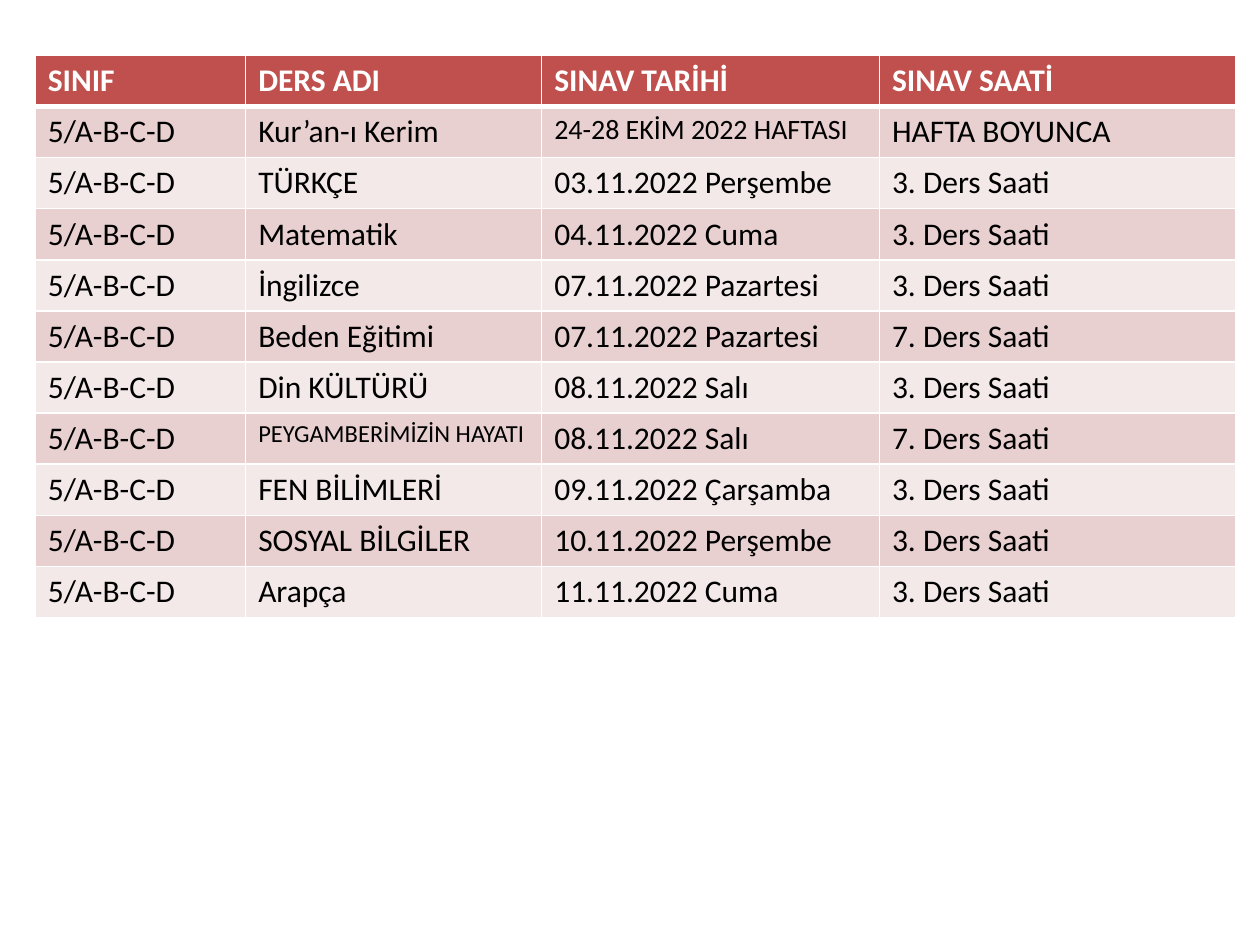
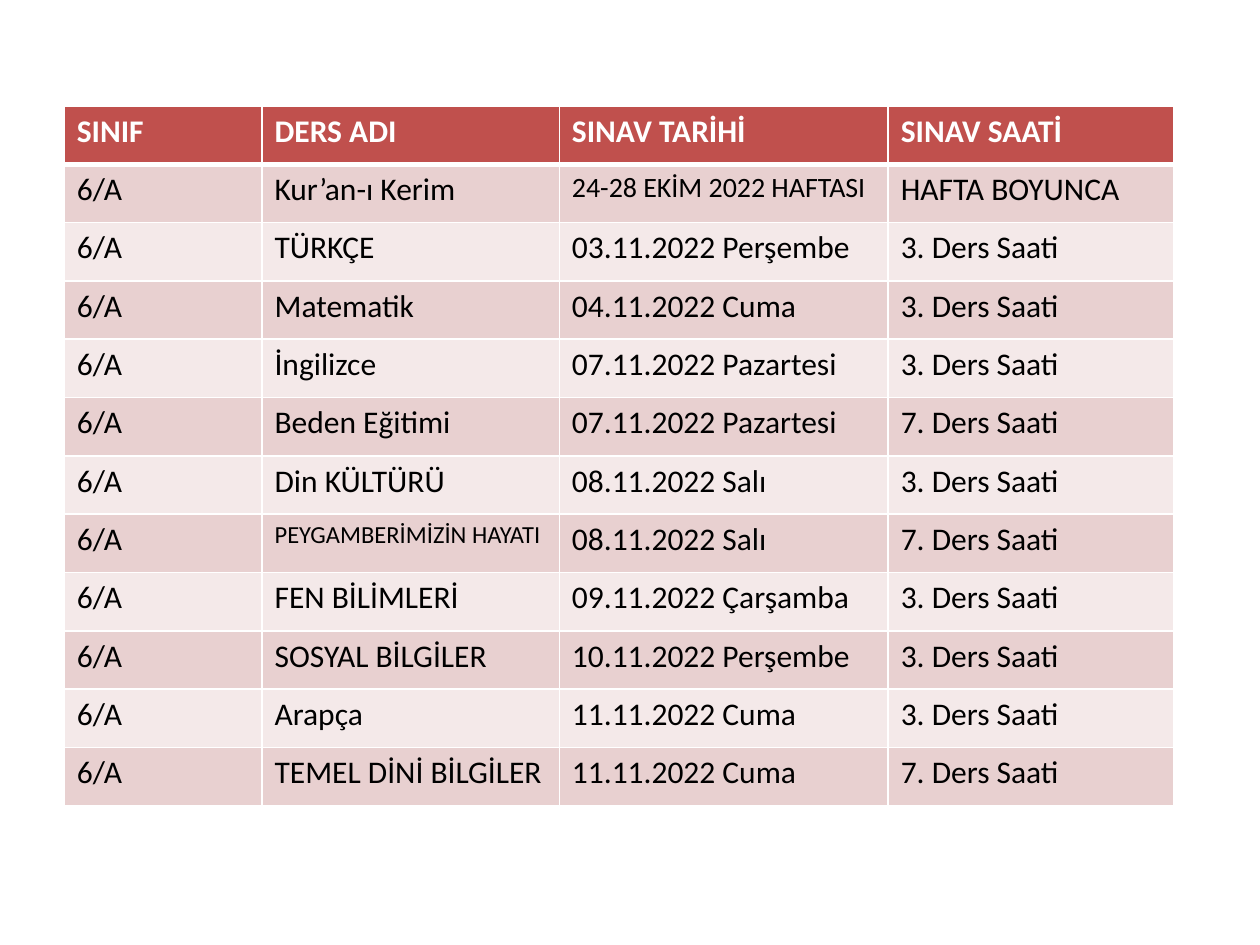
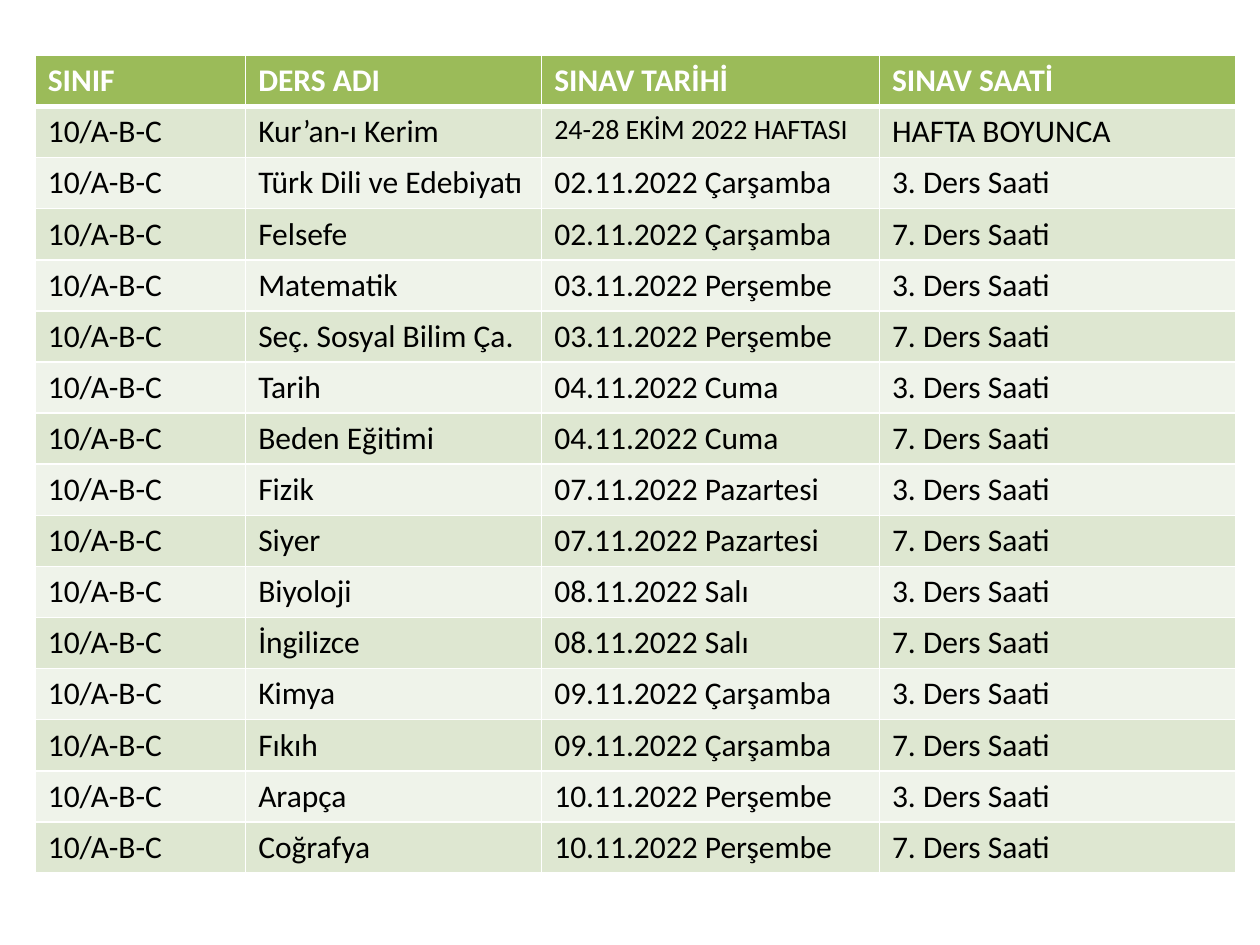
"""Build three exam timetable slides, one table for each year group."""
from lxml.etree import SubElement
from pptx import Presentation
from pptx.dml.color import RGBColor
from pptx.oxml.ns import qn
from pptx.util import Inches, Pt

COLORS = {
    "white": "FFFFFF", "black": "000000",
    "red": "C0504D", "red_band": "E8D0D0", "red_light": "F4E9E9",
    "green": "9BBB59", "green_band": "DEE7D1", "green_light": "EFF3EA",
}
HEAD = {"name": "Calibri", "size": Pt(18), "bold": True}
BODY = {**HEAD, "bold": False}
SMALL = {"24-28 EKİM 2022 HAFTASI": Pt(16), "PEYGAMBERİMİZİN HAYATI": Pt(14)}

HEADERS = ["SINIF", "DERS ADI", "SINAV TARİHİ", "SINAV SAATİ"]
ORAL = ["Kur’an-ı Kerim", "24-28 EKİM 2022 HAFTASI", "HAFTA BOYUNCA"]
WEEKDAYS = {2: "Çarşamba", 3: "Perşembe", 4: "Cuma", 7: "Pazartesi",
            8: "Salı", 9: "Çarşamba", 10: "Perşembe", 11: "Cuma"}

MIDDLE = [
    ("TÜRKÇE", 3, 3), ("Matematik", 4, 3), ("İngilizce", 7, 3),
    ("Beden Eğitimi", 7, 7), ("Din KÜLTÜRÜ", 8, 3),
    ("PEYGAMBERİMİZİN HAYATI", 8, 7), ("FEN BİLİMLERİ", 9, 3),
    ("SOSYAL BİLGİLER", 10, 3), ("Arapça", 11, 3),
]
SIXTH = MIDDLE + [("TEMEL DİNİ BİLGİLER", 11, 7)]
TENTH = [
    ("Türk Dili ve Edebiyatı", 2, 3), ("Felsefe", 2, 7),
    ("Matematik", 3, 3), ("Seç. Sosyal Bilim Ça.", 3, 7),
    ("Tarih", 4, 3), ("Beden Eğitimi", 4, 7),
    ("Fizik", 7, 3), ("Siyer", 7, 7),
    ("Biyoloji", 8, 3), ("İngilizce", 8, 7),
    ("Kimya", 9, 3), ("Fıkıh", 9, 7),
    ("Arapça", 10, 3), ("Coğrafya", 10, 7),
]
WIDE = {"left": 2.8, "top": 4.4, "cols": [16.7, 23.5, 26.8, 28.3]}
INSET = {"left": 5.1, "top": 8.4, "cols": [15.7, 23.6, 26.1, 22.7]}


def rgb(key):
    return RGBColor.from_string(COLORS[key])


def timetable(group, exams):
    rows = [[group, lesson, f"{day:02}.11.2022 {WEEKDAYS[day]}", f"{hour}. Ders Saati"]
            for lesson, day, hour in exams]
    return [HEADERS, [group, *ORAL], *rows]


class Deck:
    """Hold the style, the current slide and a grid of 100 columns by 75 rows."""

    def __init__(self):
        self.prs = Presentation()
        self.prs.slide_width, self.prs.slide_height = Inches(10), Inches(7.5)
        self.s = None

    def x(self, cols):
        return int(self.prs.slide_width * cols / 100)

    def y(self, rows):
        return int(self.prs.slide_height * rows / 75)

    def slide(self):
        self.s = self.prs.slides.add_slide(self.prs.slide_layouts[6])

    def borders(self, cell, top=1, bottom=1):
        tc_pr = cell._tc.get_or_add_tcPr()
        for side, width in {"L": 1, "R": 1, "T": top, "B": bottom}.items():
            ln = SubElement(tc_pr, qn(f"a:ln{side}"), w=str(Pt(width)))
            fill = SubElement(ln, qn("a:solidFill"))
            SubElement(fill, qn("a:srgbClr"), val=COLORS["white"])

    def cell(self, cell, text, fill, color, style):
        cell.fill.solid()
        cell.fill.fore_color.rgb = rgb(fill)
        p = cell.text_frame.paragraphs[0]
        r = p.add_run()
        r.text = text
        for name, value in style.items():
            setattr(r.font, name, value)
        r.font.color.rgb = rgb(color)

    def table(self, rows, left, top, cols, height, theme):
        frame = self.s.shapes.add_table(
            len(rows), len(cols), self.x(left), self.y(top),
            self.x(sum(cols)), self.y(height))
        tbl = frame.table
        for column, width in zip(tbl.columns, cols):
            column.width = self.x(width)
        for i, row in enumerate(rows):
            fill = f"{theme}_band" if i % 2 else f"{theme}_light"
            for j, text in enumerate(row):
                cell = tbl.cell(i, j)
                self.borders(cell, top=3 if i == 1 else 1, bottom=1 if i else 3)
                if i == 0:
                    self.cell(cell, text, theme, "white", HEAD)
                else:
                    style = {**BODY, "size": SMALL.get(text, BODY["size"])}
                    self.cell(cell, text, fill, "black", style)


def main():
    deck = Deck()
    for group, exams, place, height, theme in [
        ("5/A-B-C-D", MIDDLE, WIDE, 44.6, "red"),
        ("6/A", SIXTH, INSET, 55.6, "red"),
        ("10/A-B-C", TENTH, WIDE, 64, "green"),
    ]:
        deck.slide()
        deck.table(timetable(group, exams), **place, height=height, theme=theme)
    deck.prs.save("out.pptx")


if __name__ == "__main__":
    main()
